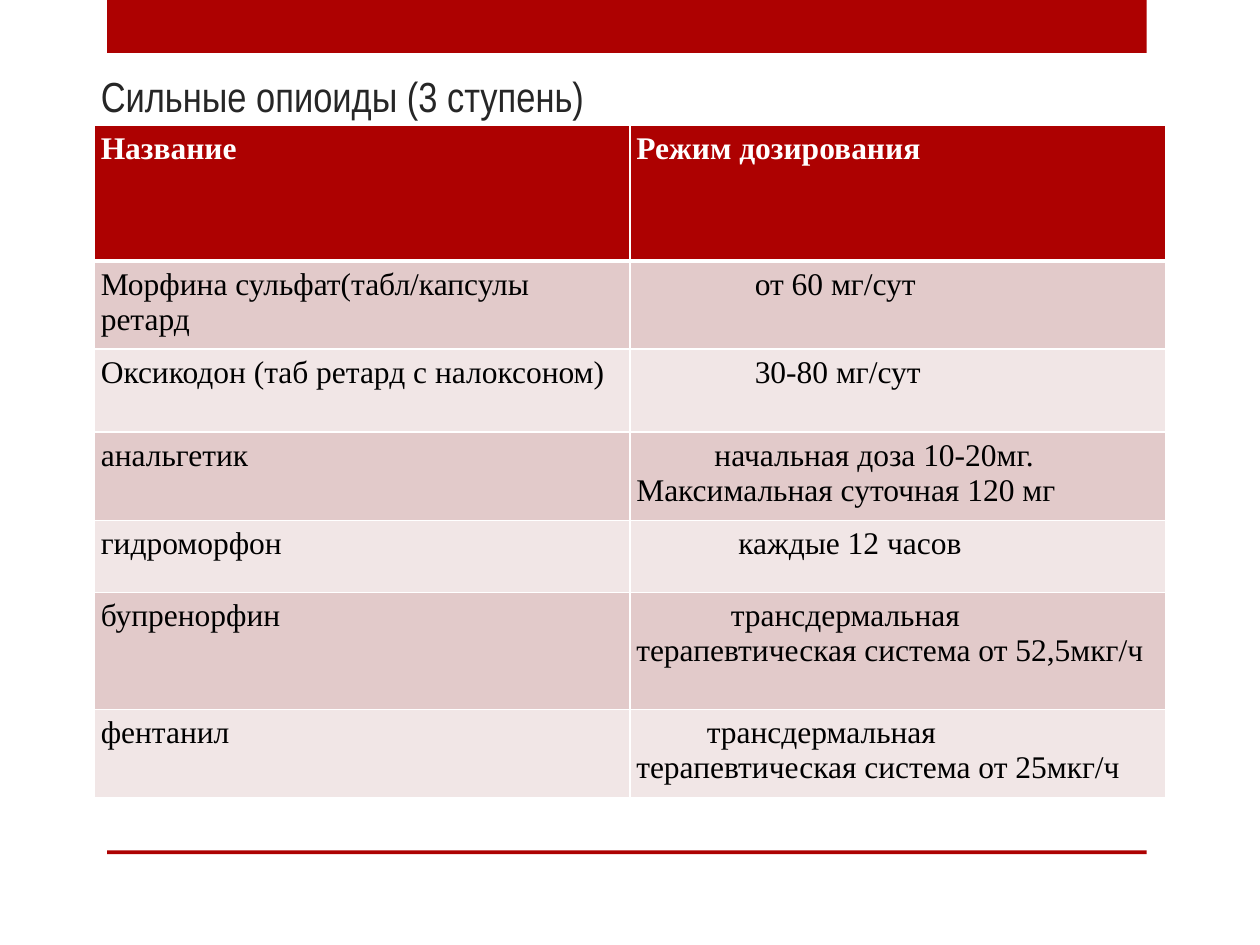
import pptx
import pptx.util
import pptx.dml.color
import pptx.enum.shapes
import pptx.enum.text
import pptx.oxml
import pptx.oxml.ns

Inches, Pt = pptx.util.Inches, pptx.util.Pt
RED, WHITE, BANDS = "AD0101", "FFFFFF", ("F1E6E6", "E2CACA")


def color(value):
    return pptx.dml.color.RGBColor.from_string(value)


def write(tf, text, size=18, font="Times New Roman", fill="000000", bold=False, indent=0):
    """Fill a frame, one paragraph per line; indent shifts the first line, in inches."""
    tf.word_wrap = True
    tf.margin_left = tf.margin_right = tf.margin_top = tf.margin_bottom = Inches(0.05)
    for i, line in enumerate(text.split("\n")):
        p = tf.paragraphs[0] if i == 0 else tf.add_paragraph()
        if i == 0 and indent:
            pPr = p._p.get_or_add_pPr()
            pPr.set("marL", "0")
            pPr.set("indent", str(Inches(indent)))
        r = p.add_run()
        r.text = line
        r.font.size, r.font.name, r.font.bold = Pt(size), font, bold
        r.font.color.rgb = color(fill)


prs = pptx.Presentation()
prs.slide_width, prs.slide_height = Inches(10), Inches(7.5)
s = prs.slides.add_slide(prs.slide_layouts[6])

# Red bars at the top and bottom
for top, height in ((0, 0.42), (6.75, 0.03)):
    sp = s.shapes.add_shape(pptx.enum.shapes.MSO_SHAPE.RECTANGLE,
                            Inches(0.85), Inches(top), Inches(8.25), Inches(height))
    sp.shadow.inherit = False
    sp.fill.solid()
    sp.fill.fore_color.rgb = color(RED)
    sp.line.fill.background()

# Title
tf = s.shapes.add_textbox(Inches(0.75), Inches(-0.74), Inches(7.42), Inches(1.75)).text_frame
tf.vertical_anchor = pptx.enum.text.MSO_ANCHOR.BOTTOM
write(tf, "Сильные опиоиды (3 ступень)", size=24, font="Arial Narrow", fill="262626")

# Dosing table: row height, drug, regimen, first-line indent of the regimen
rows = [
    (1.08, "Название", "Режим дозирования", 0),
    (0.57, "Морфина сульфат(табл/капсулы ретард", "от 60 мг/сут", 0.94),
    (0.66, "Оксикодон (таб ретард с налоксоном)", "30-80 мг/сут", 0.94),
    (0.57, "анальгетик", "начальная доза 10-20мг. Максимальная суточная 120 мг", 0.62),
    (0.57, "гидроморфон", "каждые 12 часов", 0.81),
    (0.93, "бупренорфин", "трансдермальная\nтерапевтическая система от 52,5мкг/ч", 0.75),
    (0.57, "фентанил", "трансдермальная терапевтическая система от 25мкг/ч", 0.56),
]
table = s.shapes.add_table(len(rows), 2, Inches(0.75), Inches(0.99), Inches(8.5),
                           Inches(sum(row[0] for row in rows))).table
for column in table.columns:
    column.width = Inches(4.25)

for i, (height, drug, regimen, indent) in enumerate(rows):
    table.rows[i].height = Inches(height)
    header = i == 0
    for j, (text, shift) in enumerate(((drug, 0), (regimen, indent))):
        cell = table.cell(i, j)
        write(cell.text_frame, text, fill=WHITE if header else "000000",
              bold=header, indent=shift)
        cell.margin_left = cell.margin_right = Inches(0.05)
        cell.margin_top = cell.margin_bottom = Inches(0.05)
        tcPr = cell._tc.get_or_add_tcPr()
        widths = {"L": 1, "R": 1, "T": 3 if i == 1 else 1, "B": 3 if header else 1}
        for side, width in widths.items():
            tcPr.append(pptx.oxml.parse_xml(
                f'<a:ln{side} {pptx.oxml.ns.nsdecls("a")} w="{Pt(width)}"><a:solidFill>'
                f'<a:srgbClr val="{WHITE}"/></a:solidFill></a:ln{side}>'))
        cell.fill.solid()
        cell.fill.fore_color.rgb = color(RED if header else BANDS[i % 2])

prs.save("out.pptx")
